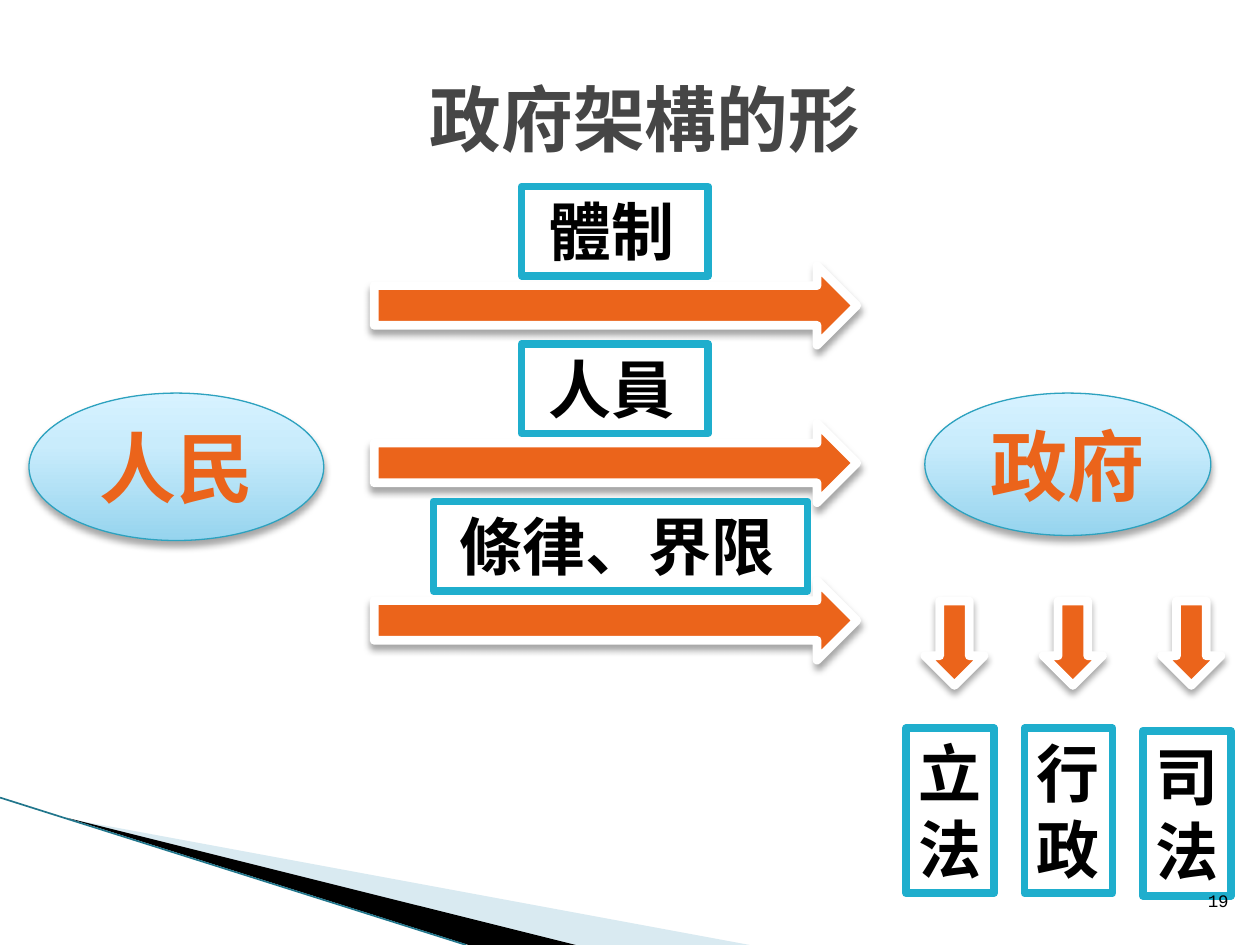
from lxml import etree
from pptx import Presentation
from pptx.dml.color import RGBColor
from pptx.enum.shapes import MSO_CONNECTOR as Link, MSO_SHAPE as Kind
from pptx.enum.text import MSO_ANCHOR as Anchor, PP_ALIGN as Align
from pptx.oxml import parse_xml
from pptx.oxml.ns import nsdecls, qn
from pptx.util import Inches, Pt

TITLE = "政府架構的形"
ROWS = [("體制", 4.14, 1.48), ("人員", 4.14, 1.48), ("條律、界限", 3.44, 2.97)]
SIDES = [("政府", 7.34, 2.27, 1.13), ("人民", 0.23, 2.34, 1.17)]
POWERS = [("立\n法", 5.78), ("行政", 5.78), ("司法", 5.8)]
PAGE = "19"
WEDGES = [
    ([(0.55, 6.5), (5.95, 7.5), (4.56, 7.5)], "A0CBDC", 40),
    ([(0.53, 6.49), (4.57, 7.5), (3.72, 7.5)], "000000", 100),
]
STOPS = [(0, "96D4EE"), (65, "C9ECFC"), (100, "D7F2FF")]
FONT = "Courier New"
ORANGE, BLUE, WHITE, BLACK = "EB641B", "1FAECD", "FFFFFF", "000000"

deck = Presentation()
deck.slide_width, deck.slide_height = Inches(10), Inches(7.5)
slide = deck.slides.add_slide(deck.slide_layouts[6])
shapes = slide.shapes


def color(code):
    return RGBColor.from_string(code)


def write(shape, text, size=36, tint=BLACK, bold=True, align=Align.LEFT,
          anchor=Anchor.TOP, left=0.1):
    frame = shape.text_frame
    frame.word_wrap = True
    frame.vertical_anchor = anchor
    frame.margin_left = Inches(left)
    frame.text = text
    for para in frame.paragraphs:
        para.alignment = align
        font = para.runs[0].font
        font.name, font.size, font.bold = FONT, Pt(size), bold
        font.color.rgb = color(tint)


def shade(shape):
    effect = shape._element.spPr.find(qn("a:effectLst"))
    effect.append(parse_xml(
        f'<a:outerShdw {nsdecls("a")} blurRad="{Pt(4)}" dist="{Pt(3)}" '
        'dir="5400000" algn="ctr" rotWithShape="0">'
        '<a:srgbClr val="000000"><a:alpha val="35000"/></a:srgbClr></a:outerShdw>'))


def draw(kind, x, y, w, h, fill, line, width):
    shape = shapes.add_shape(kind, Inches(x), Inches(y), Inches(w), Inches(h))
    shape.shadow.inherit = False
    shape.fill.solid()
    shape.fill.fore_color.rgb = color(fill)
    shape.line.color.rgb = color(line)
    shape.line.width = Pt(width)
    etree.SubElement(shape.line._get_or_add_ln(), qn("a:round"))
    return shape


def arrow(x, y, w, h, turn=0):
    shape = draw(Kind.RIGHT_ARROW, x, y, w, h, ORANGE, WHITE, 5)
    shape.rotation = turn
    shade(shape)


def label(text, x, y, w, h, **style):
    write(draw(Kind.RECTANGLE, x, y, w, h, WHITE, BLUE, 4.33), text, **style)


def oval(text, x, y, w, h):
    shape = draw(Kind.OVAL, x, y, w, h, WHITE, "2DA2BF", 0.75)
    stops = "".join(f'<a:gs pos="{pos * 1000}"><a:srgbClr val="{code}"/></a:gs>'
                    for pos, code in STOPS)
    props = shape._element.spPr
    props.replace(props.find(qn("a:solidFill")), parse_xml(
        f'<a:gradFill {nsdecls("a")} rotWithShape="1"><a:gsLst>{stops}</a:gsLst>'
        '<a:lin ang="16200000" scaled="0"/></a:gradFill>'))
    shade(shape)
    write(shape, text, size=44, tint=ORANGE, align=Align.CENTER, anchor=Anchor.MIDDLE)


def wedge(points, fill, alpha):
    spots = [(Inches(x), Inches(y)) for x, y in points]
    path = shapes.build_freeform(*spots[0])
    path.add_line_segments(spots[1:])
    shape = path.convert_to_shape()
    shape.shadow.inherit = False
    shape.fill.solid()
    shape.fill.fore_color.rgb = color(fill)
    shape.line.fill.background()
    tint = shape._element.spPr.find(qn("a:solidFill"))[0]
    etree.SubElement(tint, qn("a:alpha"), val=str(alpha * 1000))


def box(text, x, y, w, h, **style):
    write(shapes.add_textbox(Inches(x), Inches(y), Inches(w), Inches(h)), text, **style)


for item in WEDGES:
    wedge(*item)
edge = shapes.add_connector(Link.STRAIGHT, 0, Inches(6.33), Inches(3.7), Inches(7.5))
edge.line.color.rgb = color("21768C")
edge.line.width = Pt(0.95)
etree.SubElement(edge._element.spPr, qn("a:effectLst"))

box(TITLE, 0.62, 0.31, 9, 1.25, size=41, tint="464646",
    align=Align.CENTER, anchor=Anchor.MIDDLE)
for text, x, w, h in SIDES:
    oval(text, x, 3.12, w, h)
for i, (text, x, w) in enumerate(ROWS):
    drop = 1.25 * i
    arrow(2.97, 2.11 + drop, 3.83, 0.63)
    label(text, x, 1.48 + drop, w, 0.71, left=0.21)
for i, (text, y) in enumerate(POWERS):
    step = 0.94 * i
    arrow(7.24 + step, 4.87, 0.67, 0.47, turn=90)
    label(text, 7.19 + step, y, 0.7, 1.31)
box(PAGE, 9.45, 6.88, 0.4, 0.4, size=10, bold=False,
    align=Align.RIGHT, anchor=Anchor.BOTTOM)

deck.save("out.pptx")
